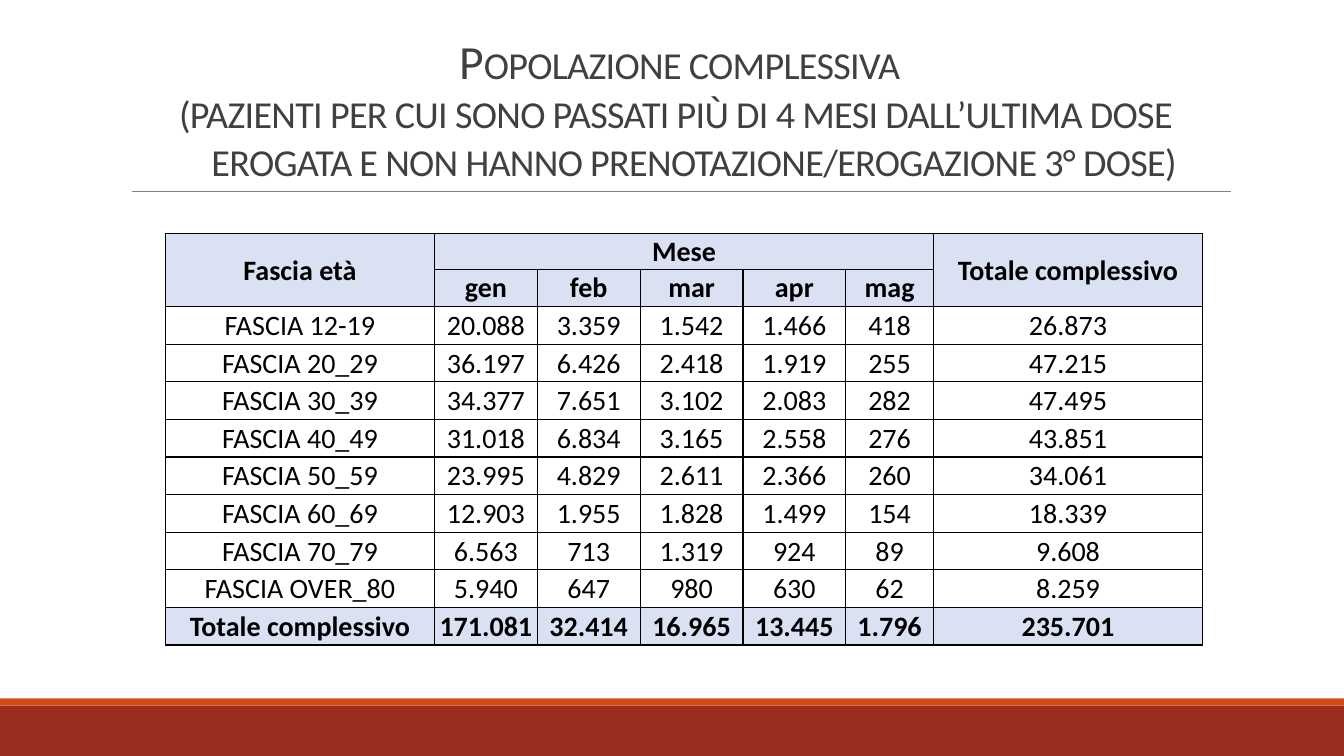
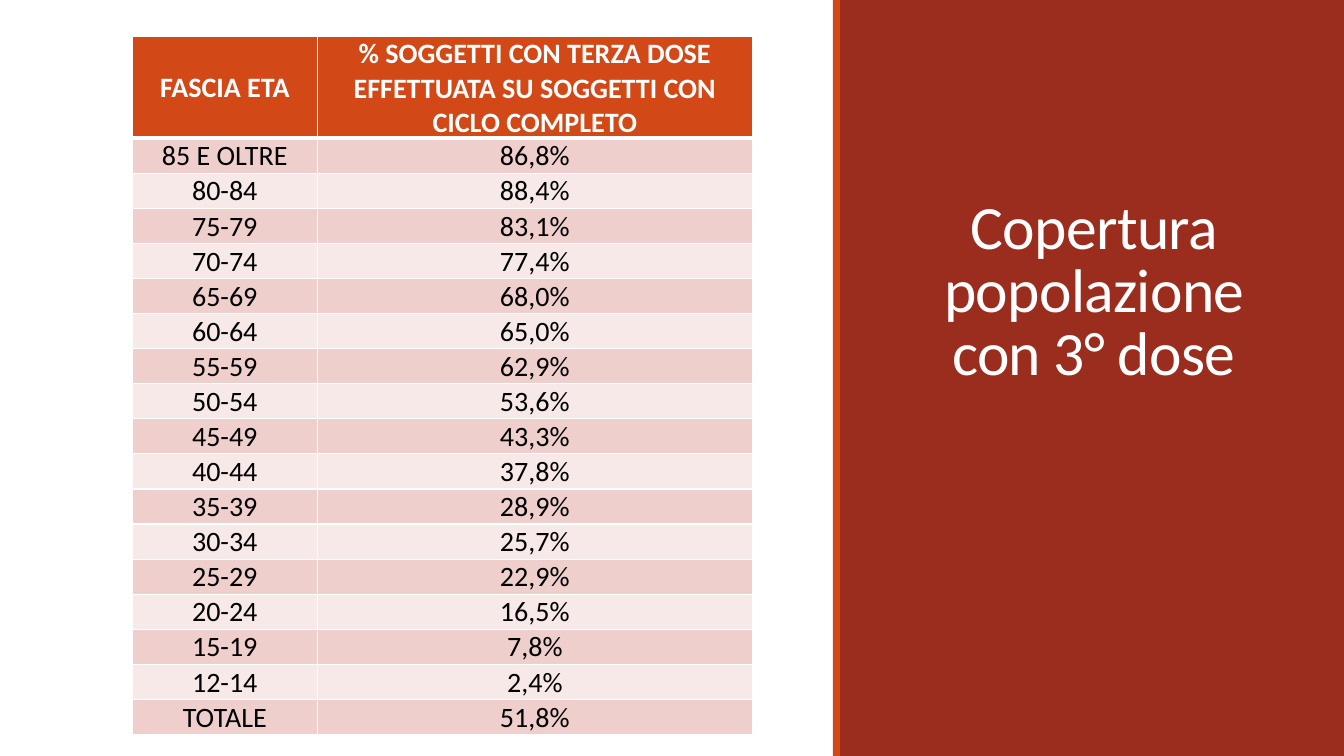
from lxml import etree
from pptx import Presentation
from pptx.dml.color import RGBColor
from pptx.enum.shapes import MSO_CONNECTOR, MSO_SHAPE
from pptx.enum.text import MSO_ANCHOR, PP_ALIGN
from pptx.oxml.ns import qn
from pptx.util import Inches, Pt

RECTANGLE = MSO_SHAPE.RECTANGLE
STRAIGHT = MSO_CONNECTOR.STRAIGHT
CENTER = PP_ALIGN.CENTER
MIDDLE, BOTTOM = MSO_ANCHOR.MIDDLE, MSO_ANCHOR.BOTTOM

WIDTH, HEIGHT = 13.33, 7.5
FONT = "Calibri"
TABLE_SIZE = 20
BRICK, ORANGE = "9B2D1F", "D34817"
WHITE, BLACK, DARK_GREY, GREY = "FFFFFF", "000000", "404040", "808080"
LIGHT_BLUE = "D9E1F2"
BANDS = ("EFCFCC", "F7E9E8")
SIDES = ("L", "R", "T", "B")

POPULATION = [
    ["Fascia età", "Mese", "", "", "", "", "Totale complessivo"],
    ["", "gen", "feb", "mar", "apr", "mag", ""],
    ["FASCIA 12-19", "20.088", "3.359", "1.542", "1.466", "418", "26.873"],
    ["FASCIA 20_29", "36.197", "6.426", "2.418", "1.919", "255", "47.215"],
    ["FASCIA 30_39", "34.377", "7.651", "3.102", "2.083", "282", "47.495"],
    ["FASCIA 40_49", "31.018", "6.834", "3.165", "2.558", "276", "43.851"],
    ["FASCIA 50_59", "23.995", "4.829", "2.611", "2.366", "260", "34.061"],
    ["FASCIA 60_69", "12.903", "1.955", "1.828", "1.499", "154", "18.339"],
    ["FASCIA 70_79", "6.563", "713", "1.319", "924", "89", "9.608"],
    ["FASCIA OVER_80", "5.940", "647", "980", "630", "62", "8.259"],
    ["Totale complessivo", "171.081", "32.414", "16.965", "13.445", "1.796", "235.701"],
]

COVERAGE = [
    ["FASCIA ETA", "% SOGGETTI CON TERZA DOSE EFFETTUATA SU SOGGETTI CON CICLO COMPLETO"],
    ["85 E OLTRE", "86,8%"],
    ["80-84", "88,4%"],
    ["75-79", "83,1%"],
    ["70-74", "77,4%"],
    ["65-69", "68,0%"],
    ["60-64", "65,0%"],
    ["55-59", "62,9%"],
    ["50-54", "53,6%"],
    ["45-49", "43,3%"],
    ["40-44", "37,8%"],
    ["35-39", "28,9%"],
    ["30-34", "25,7%"],
    ["25-29", "22,9%"],
    ["20-24", "16,5%"],
    ["15-19", "7,8%"],
    ["12-14", "2,4%"],
    ["TOTALE", "51,8%"],
]


def rgb(color):
    return RGBColor.from_string(color)


def format_runs(para, size, color, bold=False):
    para.alignment = CENTER
    for span in para.runs:
        span.font.name = FONT
        span.font.size = Pt(size)
        span.font.bold = bold
        span.font.color.rgb = rgb(color)


def set_border(cell, side, color, points):
    properties = cell._tc.get_or_add_tcPr()
    line = etree.SubElement(properties, qn(f"a:ln{side}"), w=str(Pt(points)))
    fill = etree.SubElement(line, qn("a:solidFill"))
    etree.SubElement(fill, qn("a:srgbClr"), val=color)


class Builder:
    """Holds the deck, its style and the slide being built."""

    def __init__(self):
        self.deck = Presentation()
        self.deck.slide_width = Inches(WIDTH)
        self.deck.slide_height = Inches(HEIGHT)
        self.page = None

    def add_page(self):
        self.page = self.deck.slides.add_slide(self.deck.slide_layouts[6])

    def add_band(self, left, top, width, height, color):
        band = self.page.shapes.add_shape(
            RECTANGLE, Inches(left), Inches(top), Inches(width), Inches(height))
        band.shadow.inherit = False
        band.fill.solid()
        band.fill.fore_color.rgb = rgb(color)
        band.line.fill.background()

    def add_rule(self, left, right, top):
        rule = self.page.shapes.add_connector(
            STRAIGHT, Inches(left), Inches(top), Inches(right), Inches(top))
        rule.line.color.rgb = rgb(GREY)
        rule.line.width = Pt(0.5)
        etree.SubElement(rule._element.spPr, qn("a:effectLst"))

    def add_title(self, text, left, top, width, height, size, color, small_caps=False):
        box = self.page.shapes.add_textbox(
            Inches(left), Inches(top), Inches(width), Inches(height))
        frame = box.text_frame
        frame.word_wrap = True
        frame.vertical_anchor = BOTTOM
        para = frame.paragraphs[0]
        para.text = text
        para.line_spacing = 0.85
        format_runs(para, size, color)
        for span in para.runs:
            properties = span.font._element
            properties.set("spc", "-50")
            if small_caps:
                properties.set("cap", "small")

    def add_table(self, rows, left, top, height, widths, first_height, cell_style):
        """cell_style(row) gives fill, text colour, bold, border colour and bottom width."""
        table = self.page.shapes.add_table(
            len(rows), len(widths), Inches(left), Inches(top),
            Inches(sum(widths)), Inches(height)).table
        table.first_row = table.horz_banding = False
        for column, width in zip(table.columns, widths):
            column.width = Inches(width)
        row_height = (height - first_height) / (len(rows) - 1)
        for index, values in enumerate(rows):
            table.rows[index].height = Inches(row_height if index else first_height)
            for column, value in enumerate(values):
                self.format_cell(table.cell(index, column), value, *cell_style(index))
        return table

    def format_cell(self, cell, text, fill, color, bold, border, bottom_width):
        cell.margin_left = cell.margin_right = cell.margin_top = Inches(0.01)
        cell.margin_bottom = 0
        cell.vertical_anchor = MIDDLE
        para = cell.text_frame.paragraphs[0]
        para.text = text
        format_runs(para, TABLE_SIZE, color, bold)
        for side in SIDES:
            set_border(cell, side, border, bottom_width if side == "B" else 1)
        if fill:
            cell.fill.solid()
            cell.fill.fore_color.rgb = rgb(fill)
        else:
            cell.fill.background()


def population_style(row):
    emphasis = row < 2 or row == len(POPULATION) - 1
    return LIGHT_BLUE if emphasis else None, BLACK, emphasis, BLACK, 1


def coverage_style(row):
    if row == 0:
        return ORANGE, WHITE, True, WHITE, 3
    return BANDS[(row - 1) % 2], BLACK, False, WHITE, 1


def build_population(builder):
    builder.add_page()
    builder.add_band(0, 7, WIDTH, 0.5, BRICK)
    builder.add_band(0, 6.93, WIDTH, 0.07, ORANGE)
    builder.add_rule(1.31, 12.21, 1.9)
    builder.add_title(
        "Popolazione complessiva \v(pazienti per cui sono passati più di 4 mesi "
        "dall’ultima dose erogata e non hanno prenotazione/erogazione 3° dose)",
        1.2, 0.31, 11, 1.59, 34, DARK_GREY, small_caps=True)
    widths = [2.67] + [1.02] * 4 + [0.87, 2.67]
    table = builder.add_table(
        POPULATION, 1.64, 2.32, 4.08, widths, 0.35, population_style)
    table.cell(0, 1).merge(table.cell(0, 5))
    for column in (0, 6):
        table.cell(0, column).merge(table.cell(1, column))


def build_coverage(builder):
    builder.add_page()
    builder.add_band(8.33, 0, 5, HEIGHT, BRICK)
    builder.add_band(8.26, 0, 0.07, HEIGHT, ORANGE)
    builder.add_title(
        "Copertura popolazione con 3° dose", 8.85, 0.7, 4, 3.2, 44, WHITE)
    builder.add_table(
        COVERAGE, 1.31, 0.36, 6.79, [1.84, 4.31], 0.87, coverage_style)


def main():
    builder = Builder()
    build_population(builder)
    build_coverage(builder)
    builder.deck.save("out.pptx")


if __name__ == "__main__":
    main()
